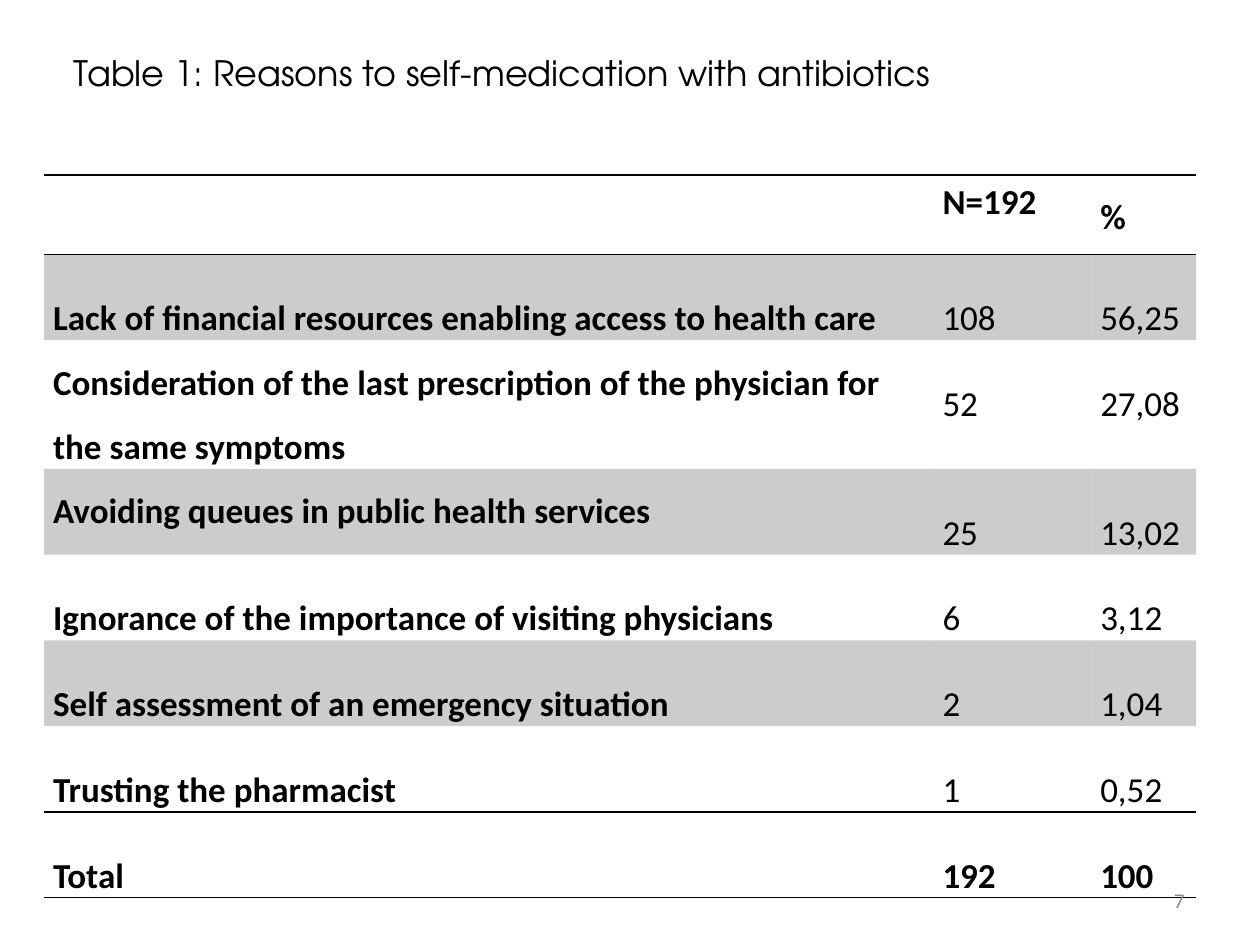
from dataclasses import dataclass

from lxml import etree
from pptx import Presentation
from pptx.dml.color import RGBColor
from pptx.enum.text import MSO_ANCHOR, MSO_AUTO_SIZE, PP_ALIGN
from pptx.oxml.ns import qn
from pptx.util import Cm, Pt

TOP, MIDDLE = MSO_ANCHOR.TOP, MSO_ANCHOR.MIDDLE
LEFT, RIGHT = PP_ALIGN.LEFT, PP_ALIGN.RIGHT
NO_AUTOFIT = MSO_AUTO_SIZE.NONE

COLORS = {"text": "000000", "rule": "000000", "band": "000000", "number": "8C8C8C"}
BAND_OPACITY = 20
PLAIN_TABLE_STYLE = "{2D5ABB26-0587-4C30-8999-92F81FD0307C}"
COLUMN_WIDTHS = (17.93, 3.18, 2.11)
TITLE_ONLY_LAYOUT = 5


@dataclass
class Row:
    texts: tuple[str, str, str]
    bold: tuple[bool, bool, bool] = (True, False, False)
    spacing: tuple[float, float, float] = (2.0, 2.0, 2.0)
    height: float = 1.57
    banded: bool = False
    ruled: bool = False


ALL_BOLD = (True, True, True)
ROWS = [
    Row(("", "N=192", "%"), ALL_BOLD, (1.0, 1.15, 1.5), height=1.6, ruled=True),
    Row(("Lack of financial resources enabling access to health care", "108", "56,25"),
        banded=True),
    Row(("Consideration of the last prescription of the physician for the same symptoms",
         "52", "27,08"), spacing=(1.5, 2.0, 2.0), height=2.59),
    Row(("Avoiding queues in public health services", "25", "13,02"),
        spacing=(1.5, 2.0, 2.0), banded=True),
    Row(("Ignorance of the importance of visiting physicians", "6", "3,12")),
    Row(("Self assessment of an emergency situation", "2", "1,04"), banded=True),
    Row(("Trusting the pharmacist", "1", "0,52")),
    Row(("Total", "192", "100"), ALL_BOLD, ruled=True),
]


def set_attributes(target, values: dict) -> None:
    for name, value in values.items():
        setattr(target, name, value)


def write_text(para, text: str, color: str, **font_values) -> None:
    span = para.add_run()
    span.text = text
    set_attributes(span.font, font_values)
    span.font.color.rgb = RGBColor.from_string(COLORS[color])


def rule_cell(cell) -> None:
    """Draw thin rules along the top and bottom of a cell."""
    properties = cell._tc.get_or_add_tcPr()
    for position, tag in enumerate(("a:lnT", "a:lnB")):
        line = etree.Element(qn(tag), w=str(Pt(1)))
        fill = etree.SubElement(line, qn("a:solidFill"))
        etree.SubElement(fill, qn("a:srgbClr"), val=COLORS["rule"])
        properties.insert(position, line)


def fill_cell(cell, banded: bool) -> None:
    if not banded:
        cell.fill.background()
        return
    cell.fill.solid()
    cell.fill.fore_color.rgb = RGBColor.from_string(COLORS["band"])
    color = cell._tc.tcPr.find(".//" + qn("a:srgbClr"))
    etree.SubElement(color, qn("a:alpha"), val=str(BAND_OPACITY * 1000))


def add_reasons_table(slide) -> None:
    frame = slide.shapes.add_table(
        len(ROWS), len(COLUMN_WIDTHS), Cm(0.89), Cm(3.53),
        Cm(sum(COLUMN_WIDTHS)), Cm(sum(row.height for row in ROWS)))
    table = frame.table
    set_attributes(table, {"first_row": False, "horz_banding": False})
    table._tbl.tblPr.find(qn("a:tableStyleId")).text = PLAIN_TABLE_STYLE
    for column, width in zip(table.columns, COLUMN_WIDTHS):
        column.width = Cm(width)
    for table_row, row in zip(table.rows, ROWS):
        table_row.height = Cm(row.height)
        for cell, text, bold, spacing in zip(table_row.cells, row.texts, row.bold, row.spacing):
            set_attributes(cell, {"margin_left": Cm(0.18), "margin_right": Cm(0.18),
                                  "margin_top": 0, "margin_bottom": 0})
            fill_cell(cell, row.banded)
            if row.ruled:
                rule_cell(cell)
            para = cell.text_frame.paragraphs[0]
            para.line_spacing = spacing
            if text:
                write_text(para, text, "text", name="Calibri", size=Pt(20), bold=bold)


def add_title(slide) -> None:
    title = slide.shapes.title
    set_attributes(title, {"left": Cm(1.09), "top": Cm(0.91),
                           "width": Cm(18.16), "height": Cm(1.12)})
    set_attributes(title.text_frame, {"auto_size": NO_AUTOFIT, "vertical_anchor": TOP,
                                      "word_wrap": True, "margin_left": Cm(0.4)})
    para = title.text_frame.paragraphs[0]
    para.alignment = LEFT
    write_text(para, "Table 1: Reasons to self-medication with antibiotics", "text",
               name="TeX Gyre Adventor", size=Pt(20), bold=False)


def add_page_number(slide) -> None:
    box = slide.shapes.add_textbox(Cm(18.2), Cm(17.65), Cm(5.93), Cm(1.01))
    set_attributes(box.text_frame, {"word_wrap": True, "vertical_anchor": MIDDLE})
    para = box.text_frame.paragraphs[0]
    para.alignment = RIGHT
    write_text(para, "7", "number", name="Calibri", size=Pt(12))


def main() -> None:
    deck = Presentation()
    set_attributes(deck, {"slide_width": Cm(25.4), "slide_height": Cm(19.05)})
    slide = deck.slides.add_slide(deck.slide_layouts[TITLE_ONLY_LAYOUT])
    add_reasons_table(slide)
    add_title(slide)
    add_page_number(slide)
    deck.save("out.pptx")


if __name__ == "__main__":
    main()
